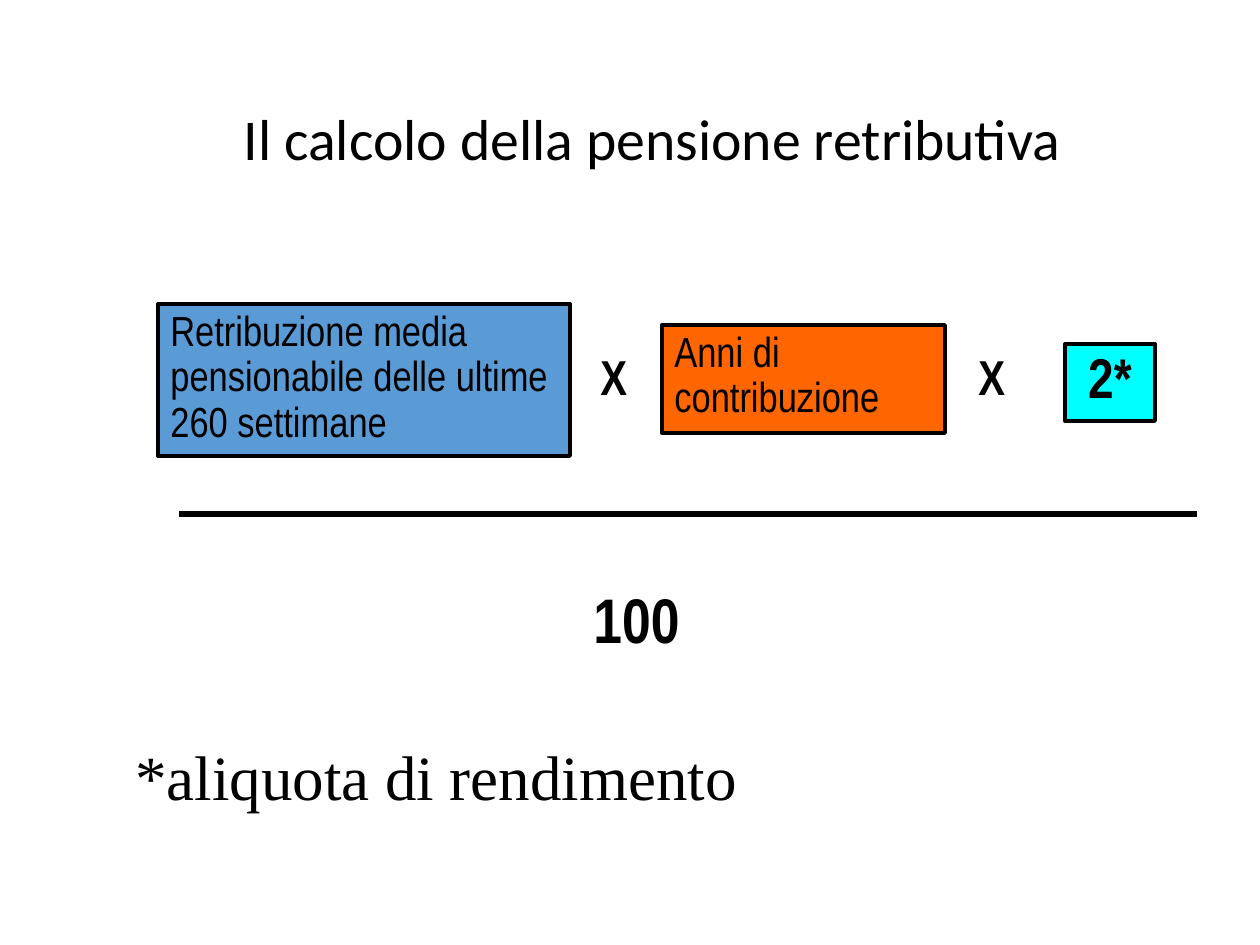
from lxml.etree import SubElement
from pptx import Presentation
from pptx.dml.color import RGBColor
from pptx.enum.shapes import MSO_CONNECTOR as Connector, MSO_SHAPE as Shape
from pptx.enum.text import MSO_ANCHOR as Anchor, PP_ALIGN as Align
from pptx.oxml.ns import qn
from pptx.util import Pt

TITLE = ("Il calcolo della pensione retributiva", (231, 63, 1008, 158))
FACTORS = [
    ("Retribuzione media pensionabile delle ultime 260 settimane",
     (158, 304, 412, 152), "pay", "factor", Align.LEFT),
    ("Anni di contribuzione", (662, 325, 283, 108), "years", "factor", Align.LEFT),
    ("2*", (1065, 344, 90, 77), "rate", "rate", Align.CENTER),
]
LABELS = [
    ("X", (588, 347, 53, 65), "operator", True),
    ("X", (966, 347, 53, 65), "operator", True),
    ("100", (581, 583, 111, 81), "divisor", True),
    ("*aliquota di rendimento", (123, 731, 628, 88), "note", False),
]
FRACTION_BAR = (179, 514, 1197, 514)

THEME = {
    "colors": {"ink": "000000", "pay": "5B9BD5", "years": "FF6600", "rate": "00FFFF"},
    "fonts": {
        "title": {"name": "Calibri", "size": Pt(33), "bold": False},
        "factor": {"name": "Arial Narrow", "size": Pt(24), "bold": False},
        "rate": {"name": "Arial Narrow", "size": Pt(32), "bold": True},
        "operator": {"name": "Arial Narrow", "size": Pt(28), "bold": True},
        "divisor": {"name": "Arial Narrow", "size": Pt(36), "bold": True},
        "note": {"name": "Times New Roman", "size": Pt(36), "bold": False},
    },
    "outline": Pt(2.25),
    "bar": Pt(3),
}
SCALE = 914400 / 126


def emu(lengths):
    return [round(length * SCALE) for length in lengths]


def color(name):
    return RGBColor.from_string(THEME["colors"][name])


def write(box, text, style, align=Align.LEFT, anchor=Anchor.TOP, wrap=True, spacing=0.9):
    frame = box.text_frame
    frame.word_wrap = wrap
    frame.vertical_anchor = anchor
    para = frame.paragraphs[0]
    para.alignment = align
    para.line_spacing = spacing
    span = para.add_run()
    span.text = text
    for key, value in THEME["fonts"][style].items():
        setattr(span.font, key, value)
    span.font.color.rgb = color("ink")


def add_title(slide):
    text, bounds = TITLE
    title = slide.shapes.title
    for key, value in zip(("left", "top", "width", "height"), emu(bounds)):
        setattr(title, key, value)
    write(title, text, "title", anchor=Anchor.MIDDLE)


def add_factor(slide, text, bounds, fill, style, align):
    box = slide.shapes.add_shape(Shape.RECTANGLE, *emu(bounds))
    box.shadow.inherit = False
    box.fill.solid()
    box.fill.fore_color.rgb = color(fill)
    box.line.color.rgb = color("ink")
    box.line.width = THEME["outline"]
    write(box, text, style, align)


def add_label(slide, text, bounds, style, tight):
    box = slide.shapes.add_textbox(*emu(bounds))
    write(box, text, style, wrap=False, spacing=0.9 if tight else 1.0)


def add_fraction_bar(slide):
    bar = slide.shapes.add_connector(Connector.STRAIGHT, *emu(FRACTION_BAR))
    bar.line.color.rgb = color("ink")
    bar.line.width = THEME["bar"]
    SubElement(bar._element.spPr, qn("a:effectLst"))


def main():
    deck = Presentation()
    deck.slide_width, deck.slide_height = emu((1260, 945))
    slide = deck.slides.add_slide(deck.slide_layouts[5])
    add_title(slide)
    for factor in FACTORS:
        add_factor(slide, *factor)
    for label in LABELS:
        add_label(slide, *label)
    add_fraction_bar(slide)
    deck.save("out.pptx")


if __name__ == "__main__":
    main()
